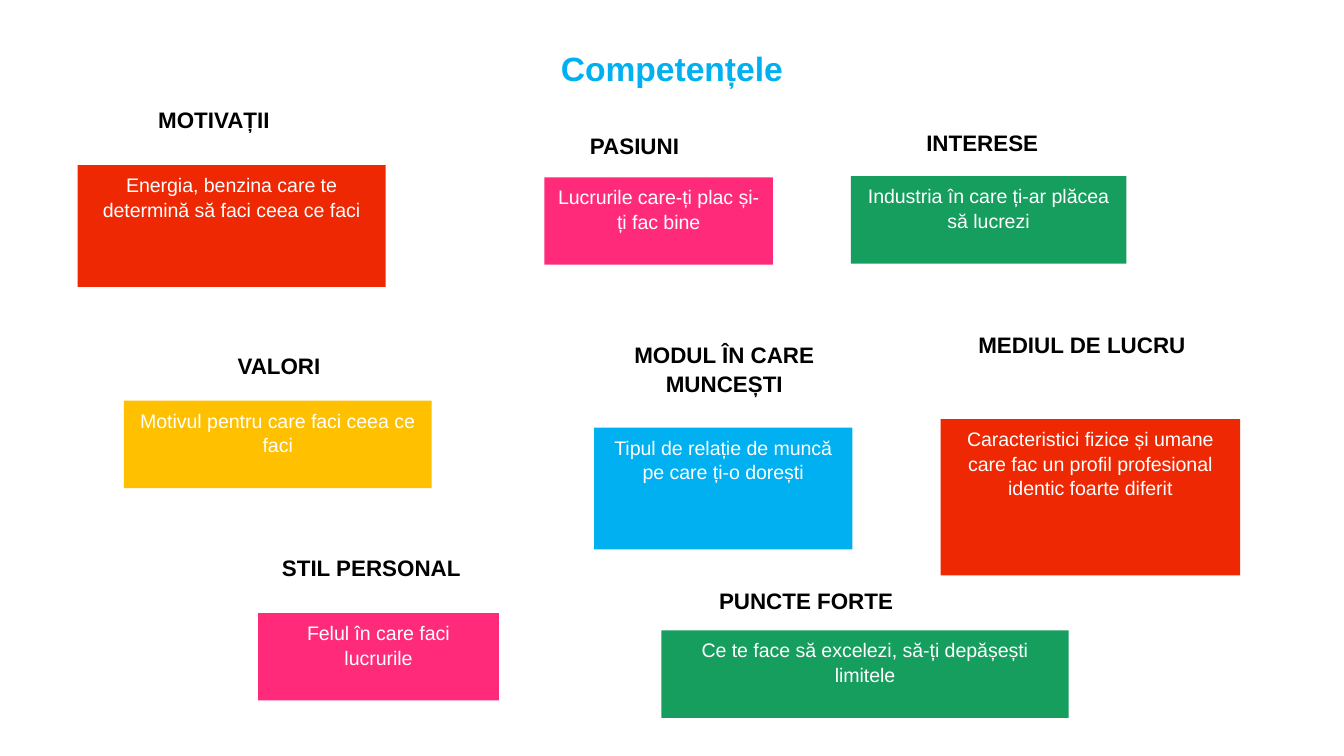
from pptx import Presentation
from pptx.dml.color import RGBColor
from pptx.enum import shapes, text
from pptx.util import Cm, Pt

BLACK = RGBColor(0x00, 0x00, 0x00)
WHITE = RGBColor(0xFF, 0xFF, 0xFF)
RED = RGBColor(0xED, 0x28, 0x03)
PINK = RGBColor(0xFF, 0x2A, 0x79)
GREEN = RGBColor(0x15, 0x9E, 0x5D)
YELLOW = RGBColor(0xFF, 0xC0, 0x00)
BLUE = RGBColor(0x00, 0xB0, 0xF0)

LEFT, CENTER = text.PP_ALIGN.LEFT, text.PP_ALIGN.CENTER
FONT = "Arial"
LINE_SPACING = 1.05

TITLE = "Competențele"
TITLE_AREA = (6.02, 0.74, 13.36, 1.02)

# heading, its alignment and area, description, its colour and area
# areas are left, top, width, height in centimetres
TOPICS = [
    ("MOTIVAȚII", LEFT, (2.74, 1.85, 3.25, 1.12),
     "Energia, benzina care te determină să faci ceea ce faci",
     RED, (1.47, 3.12, 5.82, 2.3)),
    ("PASIUNI", LEFT, (10.9, 2.34, 6.07, 1.12),
     "Lucrurile care-ți plac și-ți fac bine",
     PINK, (10.29, 3.35, 4.32, 1.65)),
    ("INTERESE", CENTER, (16.94, 2.29, 3.25, 1.12),
     "Industria în care ți-ar plăcea să lucrezi",
     GREEN, (16.08, 3.33, 5.21, 1.65)),
    ("VALORI", LEFT, (4.24, 6.5, 2.59, 1.12),
     "Motivul pentru care faci ceea ce faci",
     YELLOW, (2.34, 7.57, 5.82, 1.65)),
    ("MODUL ÎN CARE MUNCEȘTI", CENTER, (11.25, 6.3, 4.88, 1.85),
     "Tipul de relație de muncă pe care ți-o dorești",
     BLUE, (11.23, 8.08, 4.88, 2.3)),
    ("MEDIUL DE LUCRU", CENTER, (18.01, 6.1, 4.88, 1.85),
     "Caracteristici fizice și umane care fac un profil profesional "
     "identic foarte diferit",
     RED, (17.78, 7.92, 5.66, 2.95)),
    ("STIL PERSONAL", LEFT, (5.08, 10.31, 8.1, 1.12),
     "Felul în care faci lucrurile",
     PINK, (4.88, 11.58, 4.55, 1.65)),
    ("PUNCTE FORTE", LEFT, (13.34, 10.95, 7.29, 1.12),
     "Ce te face să excelezi, să-ți depășești limitele",
     GREEN, (12.5, 11.91, 7.7, 1.65)),
]


def write(shape, wording, size, color, bold=False, align=CENTER):
    frame = shape.text_frame
    frame.word_wrap = True
    frame.vertical_anchor = text.MSO_ANCHOR.TOP
    paragraph = frame.paragraphs[0]
    paragraph.alignment = align
    paragraph.line_spacing = LINE_SPACING
    run = paragraph.add_run()
    run.text = wording
    run.font.name = FONT
    run.font.size = Pt(size)
    run.font.bold = bold
    run.font.color.rgb = color


def add_label(slide, area, wording, **text_format):
    label = slide.shapes.add_textbox(*map(Cm, area))
    write(label, wording, bold=True, **text_format)


def add_box(slide, area, wording, fill):
    box = slide.shapes.add_shape(shapes.MSO_SHAPE.RECTANGLE, *map(Cm, area))
    box.shadow.inherit = False
    box.fill.solid()
    box.fill.fore_color.rgb = fill
    box.line.fill.background()
    write(box, wording, size=10.5, color=WHITE)


def main():
    presentation = Presentation()
    presentation.slide_width = Cm(25.4)
    presentation.slide_height = Cm(14.28)
    slide = presentation.slides.add_slide(presentation.slide_layouts[6])

    add_label(slide, TITLE_AREA, TITLE, size=18, color=BLUE)
    for heading, align, heading_area, description, fill, box_area in TOPICS:
        add_label(slide, heading_area, heading,
                  size=12, color=BLACK, align=align)
        add_box(slide, box_area, description, fill)

    presentation.save("out.pptx")


if __name__ == "__main__":
    main()
